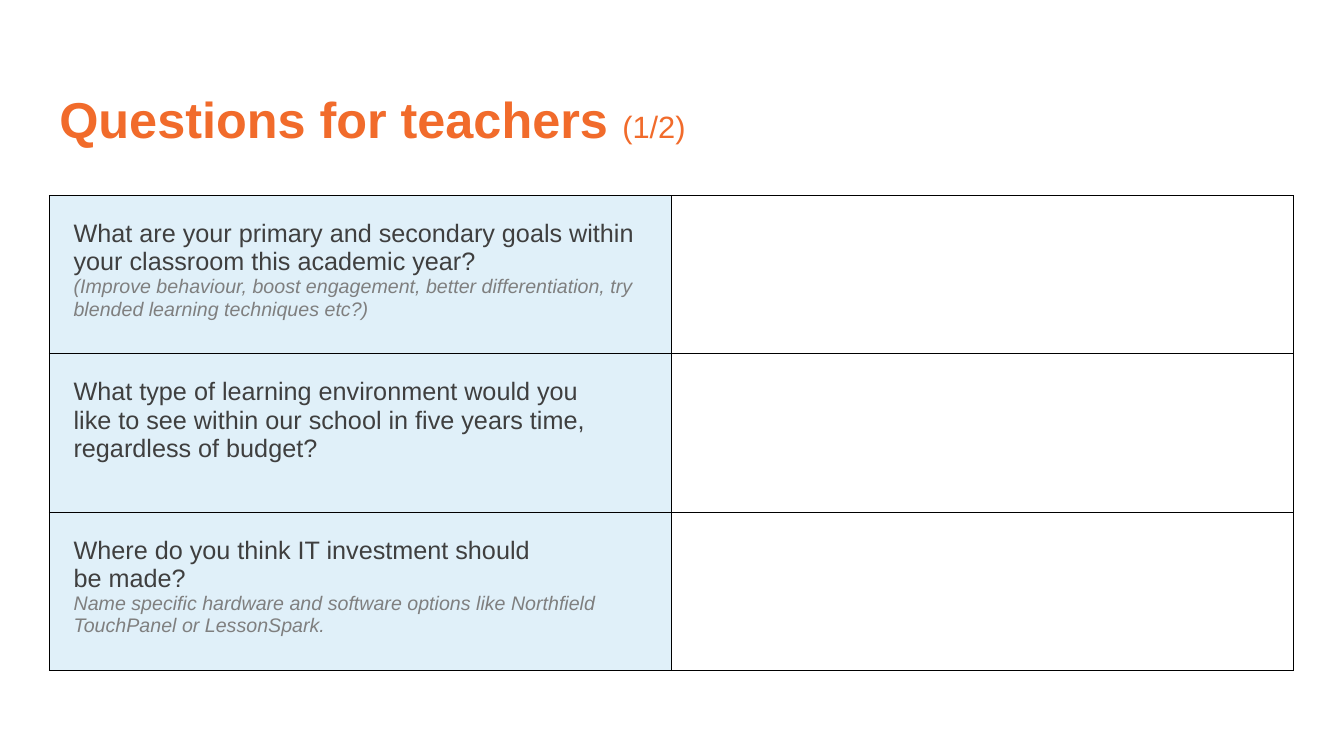
from dataclasses import dataclass

from lxml import etree
from pptx import Presentation
from pptx.dml.color import RGBColor
from pptx.enum.text import MSO_ANCHOR
from pptx.oxml.ns import qn
from pptx.util import Inches, Pt

MIDDLE = MSO_ANCHOR.MIDDLE


@dataclass(frozen=True)
class Theme:
    font: str = "Arial"
    title_color: str = "F16B2B"
    question_color: str = "3F3F3F"
    hint_color: str = "7F7F7F"
    question_fill: str = "E0F0F9"
    answer_fill: str = "FFFFFF"
    border_color: str = "000000"
    border_width: float = 0.75
    title_size: int = 36
    counter_size: int = 22
    question_size: int = 18
    hint_size: int = 14


theme = Theme()


def style_font(font, size, color, bold=False, italic=False):
    font.name = theme.font
    font.size = Pt(size)
    font.color.rgb = RGBColor.from_string(color)
    font.bold = bold
    font.italic = italic


def style_cell(cell, fill_color):
    """Draw the border on all four sides, then fill the cell."""
    properties = cell._tc.get_or_add_tcPr()
    for side in ("a:lnL", "a:lnR", "a:lnT", "a:lnB"):
        line = etree.SubElement(properties, qn(side), w=str(Pt(theme.border_width)))
        line_fill = etree.SubElement(line, qn("a:solidFill"))
        etree.SubElement(line_fill, qn("a:srgbClr"), val=theme.border_color)
    cell.fill.solid()
    cell.fill.fore_color.rgb = RGBColor.from_string(fill_color)


# Each entry is a question and its hint; "\v" is a line break.
questions = [
    ("What are your primary and secondary goals within your classroom this academic year?",
     "(Improve behaviour, boost engagement, better differentiation, "
     "try blended learning techniques etc?)"),
    ("What type of learning environment would you \v"
     "like to see within our school in five years time, regardless of budget?", None),
    ("Where do you think IT investment should\vbe made?",
     "Name specific hardware and software options like Northfield "
     "TouchPanel or LessonSpark."),
]

presentation = Presentation()
presentation.slide_width = Inches(13.33)
presentation.slide_height = Inches(7.5)
slide = presentation.slides.add_slide(presentation.slide_layouts[6])

# Title
title = slide.shapes.add_textbox(Inches(0.49), Inches(0.49), Inches(11.5), Inches(1.45))
title.text_frame.word_wrap = True
title.text_frame.vertical_anchor = MIDDLE
heading = title.text_frame.paragraphs[0]
heading.line_spacing = 0.9
for text, size, bold in (
    ("Questions for teachers ", theme.title_size, True),
    ("(1/2)", theme.counter_size, False),
):
    run = heading.add_run()
    run.text = text
    style_font(run.font, size, theme.title_color, bold=bold)

# Questions on the left, room for answers on the right
column_width, row_height = Inches(6.17), Inches(1.57)
question_table = slide.shapes.add_table(
    len(questions), 2, Inches(0.49), Inches(1.94),
    2 * column_width, len(questions) * row_height,
).table
question_table.first_row = False
question_table.horz_banding = False

for row, (question, hint) in zip(question_table.rows, questions):
    row.height = row_height
    question_cell, answer_cell = row.cells
    style_cell(question_cell, theme.question_fill)
    style_cell(answer_cell, theme.answer_fill)
    question_cell.margin_left = question_cell.margin_right = Inches(0.24)
    question_cell.margin_top = question_cell.margin_bottom = Inches(0.24)

    question_line = question_cell.text_frame.paragraphs[0]
    question_line.text = question
    style_font(question_line.font, theme.question_size, theme.question_color)
    if hint:
        hint_line = question_cell.text_frame.add_paragraph()
        hint_line.text = hint
        style_font(hint_line.font, theme.hint_size, theme.hint_color, italic=True)

presentation.save("out.pptx")
